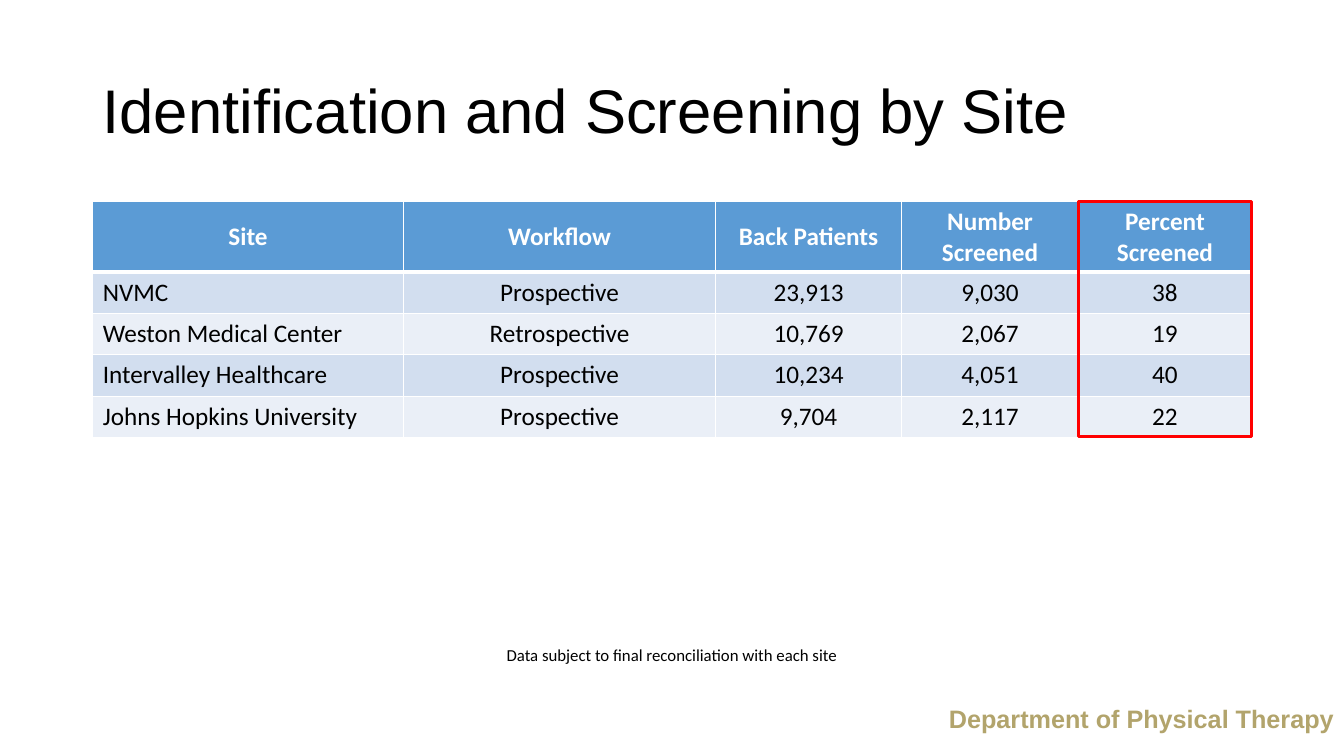
from lxml import etree
from pptx import Presentation
from pptx.dml.color import RGBColor
from pptx.enum.shapes import MSO_SHAPE
from pptx.enum.text import MSO_ANCHOR, PP_ALIGN
from pptx.oxml.ns import qn
from pptx.util import Inches, Pt

LEFT, CENTER, RIGHT = PP_ALIGN.LEFT, PP_ALIGN.CENTER, PP_ALIGN.RIGHT
TOP, MIDDLE = MSO_ANCHOR.TOP, MSO_ANCHOR.MIDDLE
RECTANGLE = MSO_SHAPE.RECTANGLE

HEADERS = ["Site", "Workflow", "Back Patients", "Number Screened", "Percent Screened"]
SITES = [
    ["NVMC", "Prospective", "23,913", "9,030", "38"],
    ["Weston Medical Center", "Retrospective", "10,769", "2,067", "19"],
    ["Intervalley Healthcare", "Prospective", "10,234", "4,051", "40"],
    ["Johns Hopkins University", "Prospective", "9,704", "2,117", "22"],
]
COLUMN_WIDTHS = [3.08, 3.1, 1.84, 1.76, 1.71]
HEADER_HEIGHT, ROW_HEIGHT = 0.69, 0.41
TABLE_LEFT, TABLE_TOP = 0.92, 2


def color(value):
    return RGBColor.from_string(value)


class SlideBuilder:
    black, white, red, gold = "000000", "FFFFFF", "FF0000", "B2A46C"
    header_fill = "5B9BD5"
    band_fills = ["D2DEEF", "EAEFF7"]
    heading_font, body_font = "Arial", "Calibri"

    def __init__(self, slide):
        self.slide = slide

    def add_words(self, frame, text, size, font, ink, align, bold=False):
        paragraph = frame.paragraphs[0]
        paragraph.alignment = align
        run = paragraph.add_run()
        run.text = text
        run.font.size = Pt(size)
        run.font.name = font
        run.font.bold = bold
        run.font.color.rgb = color(ink)
        return paragraph

    def text(self, box, text, size, font, ink, align, anchor=TOP, bold=False):
        frame = self.slide.shapes.add_textbox(*map(Inches, box)).text_frame
        frame.word_wrap = True
        frame.vertical_anchor = anchor
        return self.add_words(frame, text, size, font, ink, align, bold)

    def borders(self, cell, bottom_width):
        properties = cell._tc.get_or_add_tcPr()
        for side, width in zip("LRTB", [1, 1, 1, bottom_width]):
            line = etree.SubElement(properties, qn(f"a:ln{side}"), w=str(Pt(width)))
            fill = etree.SubElement(line, qn("a:solidFill"))
            etree.SubElement(fill, qn("a:srgbClr"), val=self.white)

    def table(self, left, top, widths, heights, rows):
        box = map(Inches, (left, top, sum(widths), sum(heights)))
        table = self.slide.shapes.add_table(len(rows), len(widths), *box).table
        for column, width in zip(table.columns, widths):
            column.width = Inches(width)
        for r, (row, height) in enumerate(zip(rows, heights)):
            table.rows[r].height = Inches(height)
            header = r == 0
            for c, text in enumerate(row):
                cell = table.cell(r, c)
                self.borders(cell, 3 if header else 1)
                cell.fill.solid()
                fill = self.header_fill if header else self.band_fills[(r - 1) % 2]
                cell.fill.fore_color.rgb = color(fill)
                cell.vertical_anchor = MIDDLE if header else TOP
                self.add_words(cell.text_frame, text, 18, self.body_font,
                               self.white if header else self.black,
                               CENTER if header or c else LEFT, header)

    def outline(self, box, ink, width):
        frame = self.slide.shapes.add_shape(RECTANGLE, *map(Inches, box))
        frame.shadow.inherit = False
        frame.fill.background()
        frame.line.color.rgb = color(ink)
        frame.line.width = Pt(width)


def main():
    deck = Presentation()
    deck.slide_width, deck.slide_height = Inches(13.33), Inches(7.5)
    page = SlideBuilder(deck.slides.add_slide(deck.slide_layouts[6]))

    page.text((6.57, 6.93, 6.76, 0.4), "Department of Physical Therapy",
              18, page.heading_font, page.gold, RIGHT, bold=True)
    title = page.text((0.92, 0.4, 11.5, 1.45), "Identification and Screening by Site",
                      44, page.heading_font, page.black, LEFT, MIDDLE)
    title.line_spacing = 0.9

    heights = [HEADER_HEIGHT] + [ROW_HEIGHT] * len(SITES)
    page.table(TABLE_LEFT, TABLE_TOP, COLUMN_WIDTHS, heights, [HEADERS] + SITES)
    page.text((2.83, 6.35, 7.67, 0.3), "Data subject to final reconciliation with each site",
              12, page.body_font, page.black, CENTER)

    percent_left = TABLE_LEFT + sum(COLUMN_WIDTHS[:-1])
    page.outline((percent_left, TABLE_TOP, COLUMN_WIDTHS[-1], sum(heights)), page.red, 2)

    deck.save("out.pptx")


if __name__ == "__main__":
    main()
